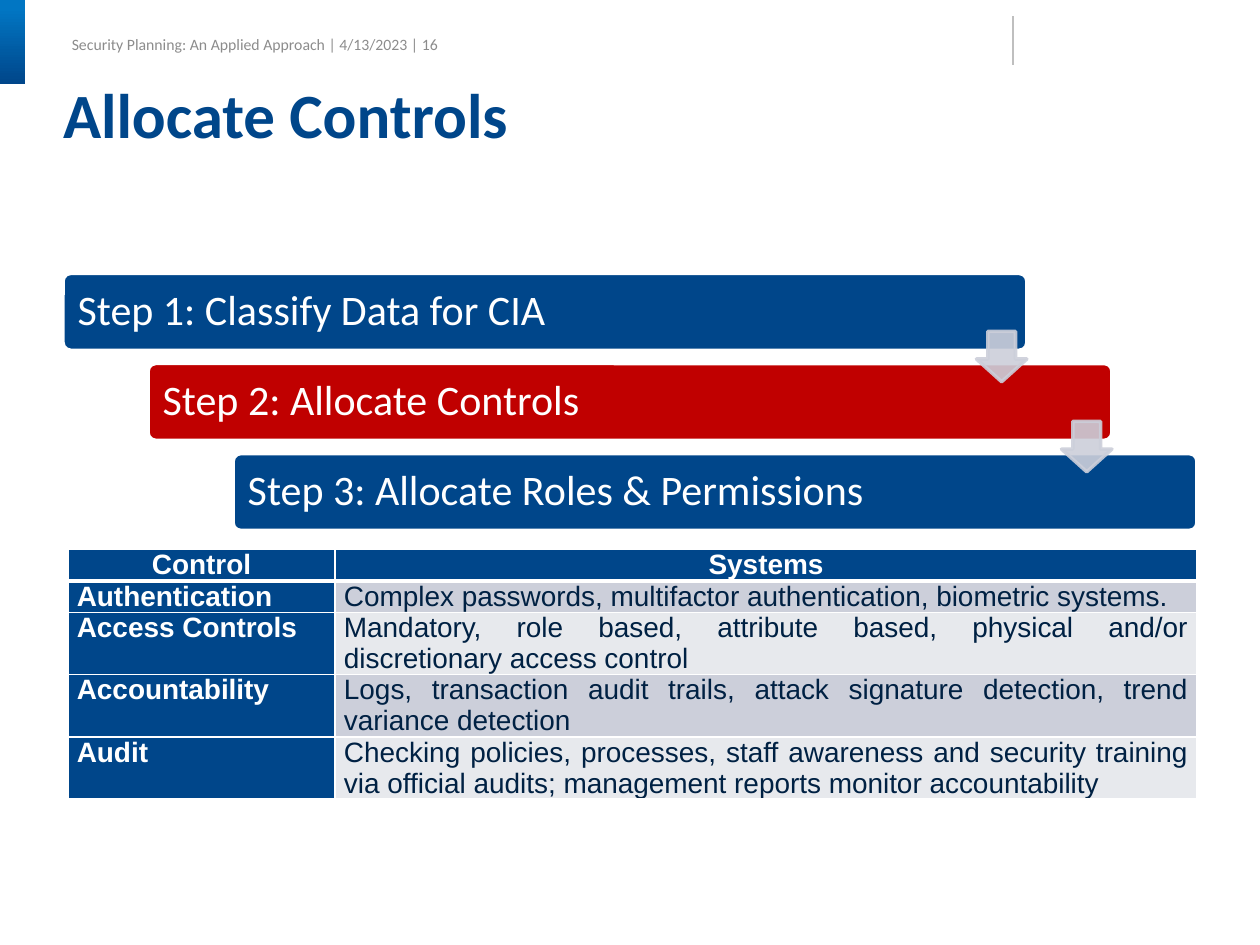
import pptx
import pptx.dml.color
import pptx.enum.shapes
import pptx.enum.text
import pptx.oxml
import pptx.oxml.ns
import pptx.util
from lxml import etree

Inches = pptx.util.Inches
Pt = pptx.util.Pt
RGB = pptx.dml.color.RGBColor
Shape = pptx.enum.shapes.MSO_SHAPE
Align = pptx.enum.text.PP_ALIGN
Anchor = pptx.enum.text.MSO_ANCHOR
qn = pptx.oxml.ns.qn

NAVY = RGB(0x00, 0x46, 0x8A)
BLUE = RGB(0x01, 0x76, 0xC3)
RED = RGB(0xC0, 0x00, 0x00)
WHITE = RGB(0xFF, 0xFF, 0xFF)
INK = RGB(0x00, 0x21, 0x43)
GREY = RGB(0x8C, 0x8C, 0x8C)
RULE = RGB(0xBF, 0xBF, 0xBF)
MIST = RGB(0xCC, 0xCF, 0xDA)
PALE = RGB(0xE7, 0xE9, 0xED)


def write(frame, text, font="Calibri", size=24, color=WHITE, bold=False,
          align=Align.LEFT, anchor=Anchor.MIDDLE, inset=0, wrap=True,
          space=None):
    """Fill a text frame with one formatted paragraph."""
    frame.word_wrap = wrap
    frame.auto_size = pptx.enum.text.MSO_AUTO_SIZE.NONE
    frame.vertical_anchor = anchor
    frame.margin_left = frame.margin_right = Inches(inset)
    frame.margin_top = frame.margin_bottom = Inches(inset)
    style(frame.paragraphs[0], text, font, size, color, bold, align, space)


def style(para, text, font, size, color, bold, align, space=None):
    para.text = text
    para.alignment = align
    para.line_spacing = space
    para.font.name = font
    para.font.size = Pt(size)
    para.font.bold = bold
    para.font.color.rgb = color


class Deck:
    def __init__(self):
        self.prs = pptx.Presentation()
        self.prs.slide_width = Inches(10)
        self.prs.slide_height = Inches(7.5)
        self.slide = self.prs.slides.add_slide(self.prs.slide_layouts[5])

    def title(self, text, *box):
        head = self.slide.shapes.title
        head.left, head.top, head.width, head.height = map(Inches, box)
        write(head.text_frame, text, size=36, color=NAVY, bold=True,
              anchor=Anchor.TOP, space=0.9)

    def label(self, text, *box, **form):
        note = self.slide.shapes.add_textbox(*map(Inches, box))
        write(note.text_frame, text, **form)

    def shape(self, kind, *box, fill, line=None, adj=()):
        item = self.slide.shapes.add_shape(kind, *map(Inches, box))
        item.shadow.inherit = False
        for i, value in enumerate(adj):
            item.adjustments[i] = value
        item.fill.solid()
        item.fill.fore_color.rgb = fill
        if line is None:
            item.line.fill.background()
        else:
            item.line.color.rgb = line
            item.line.width = Pt(2)
        return item

    def fade(self, item, top, end):
        item.fill.gradient()
        item.fill.gradient_angle = 270
        for stop, (color, place) in zip(item.fill.gradient_stops,
                                        ((top, 0.1), (end, 1))):
            stop.color.rgb = color
            stop.position = place

    def bar(self, text, left, top, fill):
        item = self.shape(Shape.ROUNDED_RECTANGLE, left, top, 7.65, 0.61,
                          fill=fill, line=WHITE, adj=(0.1,))
        write(item.text_frame, text, inset=0.1, space=0.9)

    def arrow(self, left, top):
        item = self.shape(Shape.DOWN_ARROW, left, top, 0.4, 0.4,
                          fill=MIST, line=MIST, adj=(0.55, 0.45))
        for color in item._element.spPr.iter(qn("a:srgbClr")):
            etree.SubElement(color, qn("a:alpha"), val="90000")

    def rule(self, *ends):
        line = self.slide.shapes.add_connector(
            pptx.enum.shapes.MSO_CONNECTOR.STRAIGHT, *map(Inches, ends))
        line.line.color.rgb = RULE
        line.line.width = Pt(0.75)
        etree.SubElement(line._element.spPr, qn("a:effectLst"))

    def border(self, cell, low):
        props = cell._tc.get_or_add_tcPr()
        for i, side in enumerate(("lnL", "lnR", "lnT", "lnB")):
            width = Pt(low if side == "lnB" else 1)
            edge = etree.Element(qn("a:" + side), w=str(width))
            fill = etree.SubElement(edge, qn("a:solidFill"))
            etree.SubElement(fill, qn("a:srgbClr"), val=str(WHITE))
            props.insert(i, edge)

    def cell(self, cell, text, fill, color, bold, align, low):
        cell.fill.solid()
        cell.fill.fore_color.rgb = fill
        cell.margin_left = cell.margin_right = Inches(0.07)
        cell.margin_top = cell.margin_bottom = 0
        cell.vertical_anchor = Anchor.TOP
        style(cell.text_frame.paragraphs[0], text, "Arial", 16, color,
              bold, align)
        self.border(cell, low)

    def table(self, rows, left, top, cols, highs):
        grid = self.slide.shapes.add_table(
            len(rows), len(cols), Inches(left), Inches(top),
            Inches(sum(cols)), Inches(sum(highs))).table
        for col, width in zip(grid.columns, cols):
            col.width = Inches(width)
        for r, (row, high) in enumerate(zip(rows, highs)):
            grid.rows[r].height = Inches(high)
            for c, text in enumerate(row):
                head = r == 0 or c == 0
                band = MIST if r % 2 else PALE
                self.cell(grid.cell(r, c), text,
                          fill=NAVY if head else band,
                          color=WHITE if head else INK, bold=head,
                          align=Align.CENTER if r == 0 else Align.JUSTIFY,
                          low=3 if r == 0 else 1)


STEPS = [
    ("Step 1: Classify Data for CIA", NAVY),
    ("Step 2: Allocate Controls", RED),
    ("Step 3: Allocate Roles & Permissions", NAVY),
]

ROWS = [
    ("Control", "Systems"),
    ("Authentication", "Complex passwords, multifactor authentication, "
     "biometric systems."),
    ("Access Controls", "Mandatory, role based, attribute based, physical "
     "and/or discretionary access control"),
    ("Accountability", "Logs, transaction audit trails, attack signature "
     "detection, trend variance detection"),
    ("Audit", "Checking policies, processes, staff awareness and security "
     "training via official audits; management reports monitor "
     "accountability"),
]


def main():
    deck = Deck()

    # Page header
    deck.label("Security Planning: An Applied Approach | 4/13/2023 | 16",
               0.57, 0.24, 2.84, 0.23, size=9, color=GREY, wrap=False)
    tab = deck.shape(Shape.RECTANGLE, 0, 0, 0.2, 0.67, fill=NAVY)
    deck.fade(tab, BLUE, NAVY)
    deck.rule(8.04, 0.13, 8.04, 0.52)
    deck.title("Allocate Controls", 0.5, 0.67, 9, 0.55)

    # Staircase of steps, then the arrows between them
    spots = [(0.5 + 0.675 * i, 2.17 + 0.715 * i) for i in range(len(STEPS))]
    for (text, fill), (left, top) in zip(STEPS, spots):
        deck.bar(text, left, top, fill)
    for left, top in spots[:-1]:
        deck.arrow(left + 7.25, top + 0.46)

    # Controls table
    deck.table(ROWS, 0.54, 4.36, (2.12, 6.84), (0.25, 0.25, 0.49, 0.49, 0.49))

    deck.prs.save("out.pptx")


if __name__ == "__main__":
    main()
